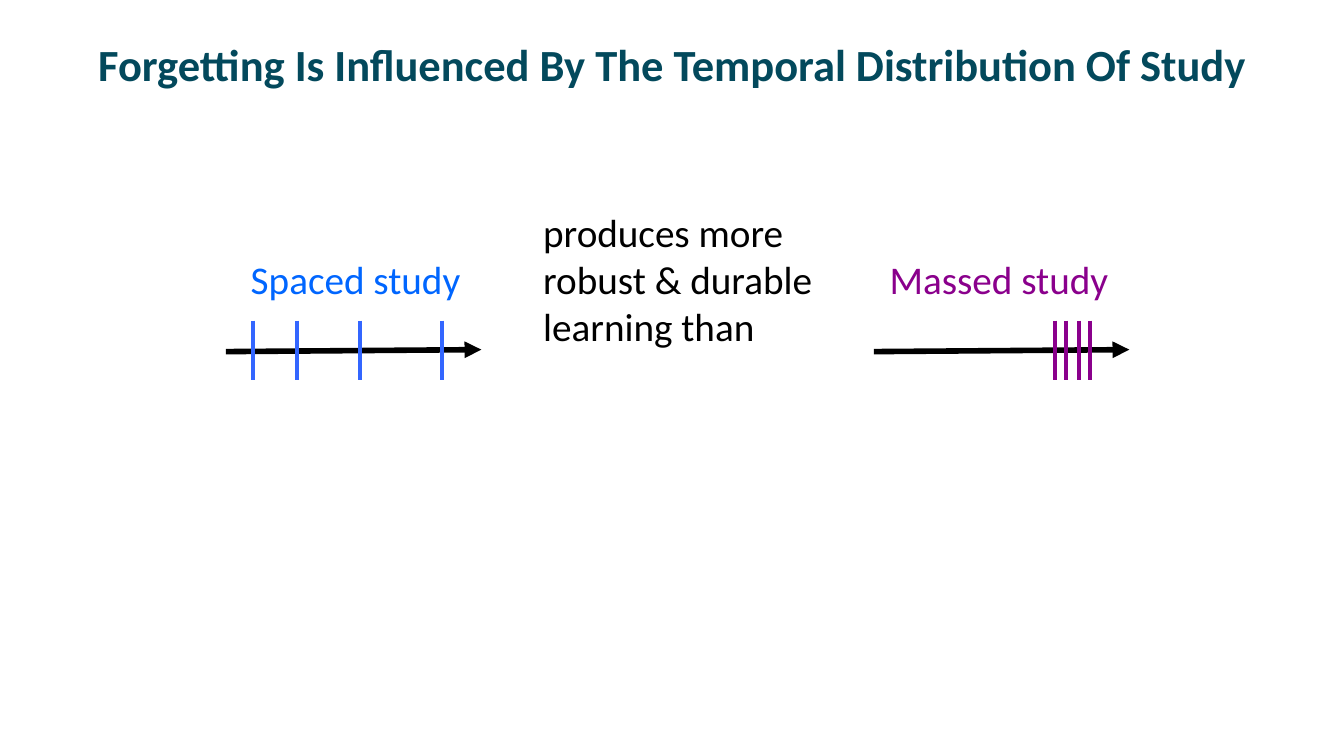
from dataclasses import dataclass

from lxml.etree import SubElement
from pptx import Presentation
from pptx.dml.color import RGBColor
from pptx.enum.shapes import MSO_CONNECTOR
from pptx.enum.text import MSO_ANCHOR, MSO_AUTO_SIZE, PP_ALIGN
from pptx.oxml.ns import qn
from pptx.util import Cm, Pt


@dataclass(frozen=True)
class Theme:
    font: str = "Calibri"
    title: str = "03495C"
    ink: str = "000000"
    spaced: str = "0066FF"
    tick: str = "3366FF"
    massed: str = "8A008C"
    head: float = 31.8
    body: float = 28
    thick: float = 4
    thin: float = 3


theme = Theme()
deck = Presentation()
deck.slide_width, deck.slide_height = Cm(33.87), Cm(19.05)
slide = deck.slides.add_slide(deck.slide_layouts[6])


def write(text, box, color, size=theme.body, bold=False, align=PP_ALIGN.LEFT,
          anchor=MSO_ANCHOR.TOP, wrap=False, inset=(0.25, 0.13)):
    frame = slide.shapes.add_textbox(*map(Cm, box)).text_frame
    frame.word_wrap = wrap
    frame.auto_size = MSO_AUTO_SIZE.NONE if wrap else MSO_AUTO_SIZE.SHAPE_TO_FIT_TEXT
    frame.vertical_anchor = anchor
    frame.margin_left = frame.margin_right = Cm(inset[0])
    frame.margin_top = frame.margin_bottom = Cm(inset[1])
    para = frame.paragraphs[0]
    para.text = text
    para.alignment = align
    for run in para.runs:
        run.font.name = theme.font
        run.font.size = Pt(size)
        run.font.bold = bold
        run.font.color.rgb = RGBColor.from_string(color)


def draw(group, start, end, color, width, arrow=False):
    line = group.shapes.add_connector(MSO_CONNECTOR.STRAIGHT, *map(Cm, start + end))
    line.line.color.rgb = RGBColor.from_string(color)
    line.line.width = Pt(width)
    if arrow:
        SubElement(line.line._get_or_add_ln(), qn("a:tailEnd"), type="triangle")
    SubElement(line._element.spPr, qn("a:effectLst"))


write("Forgetting Is Influenced By The Temporal Distribution Of Study",
      (1.7, 0.43, 30.48, 2.34), theme.title, size=theme.head, bold=True,
      align=PP_ALIGN.CENTER, anchor=MSO_ANCHOR.MIDDLE, wrap=True, inset=(0.28, 0.15))

axes = [
    (22.02, theme.massed, (26.59, 26.87, 27.2, 27.46)),
    (5.69, theme.tick, (6.38, 7.49, 9.07, 11.13)),
]
for left, color, ticks in axes:
    group = slide.shapes.add_group_shape()
    draw(group, (left, 8.86), (left + 6.44, 8.81), theme.ink, theme.thick, arrow=True)
    for x in ticks:
        draw(group, (x, 8.08), (x, 9.58), color, theme.thin)

write("Spaced study", (6.07, 6.3, 5.89, 1.45), theme.spaced)
write("Massed study", (22.17, 6.3, 6.1, 1.45), theme.massed)
write("produces more\vrobust & durable\vlearning than", (13.44, 5.11, 7.42, 3.84), theme.ink)

deck.save("out.pptx")
